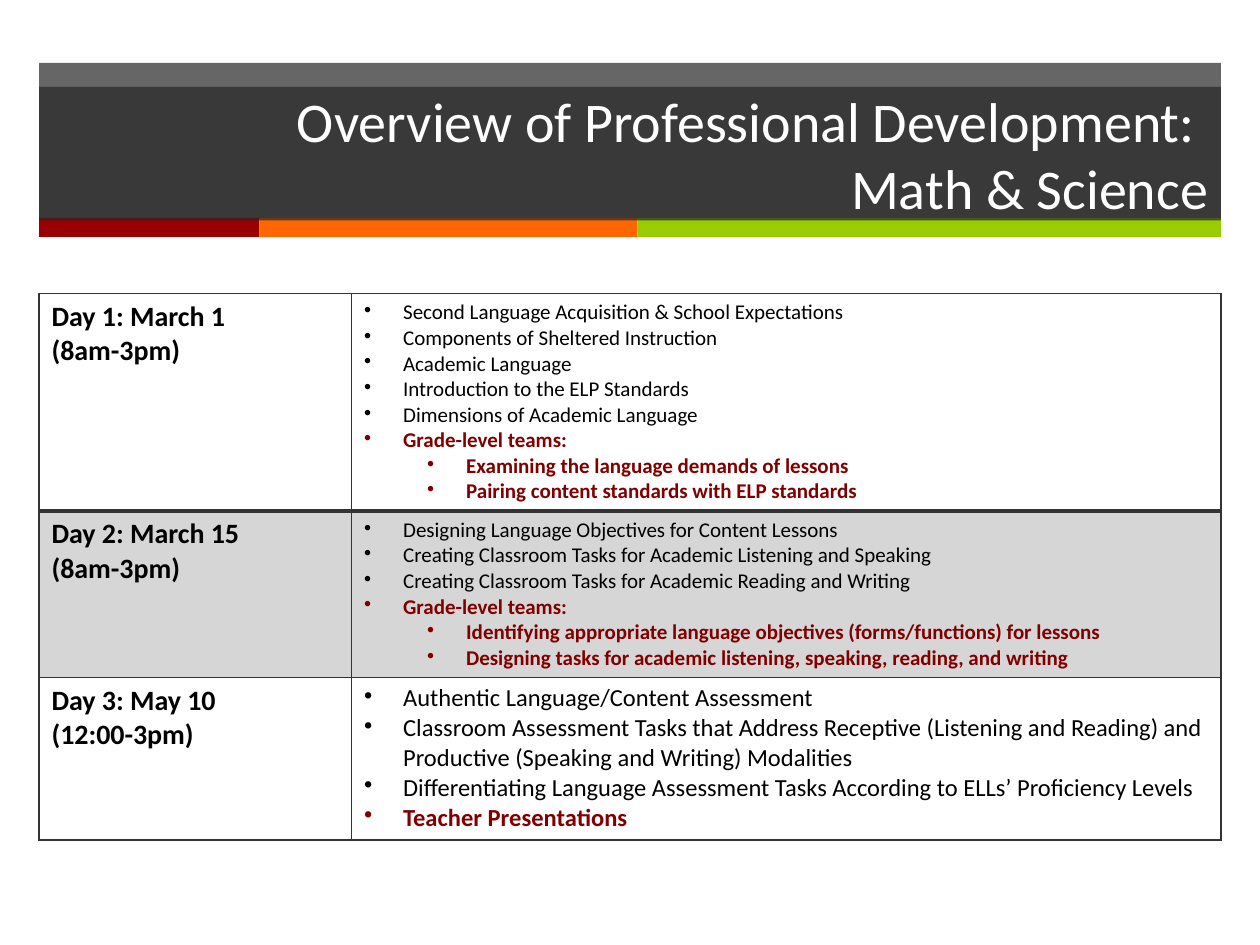
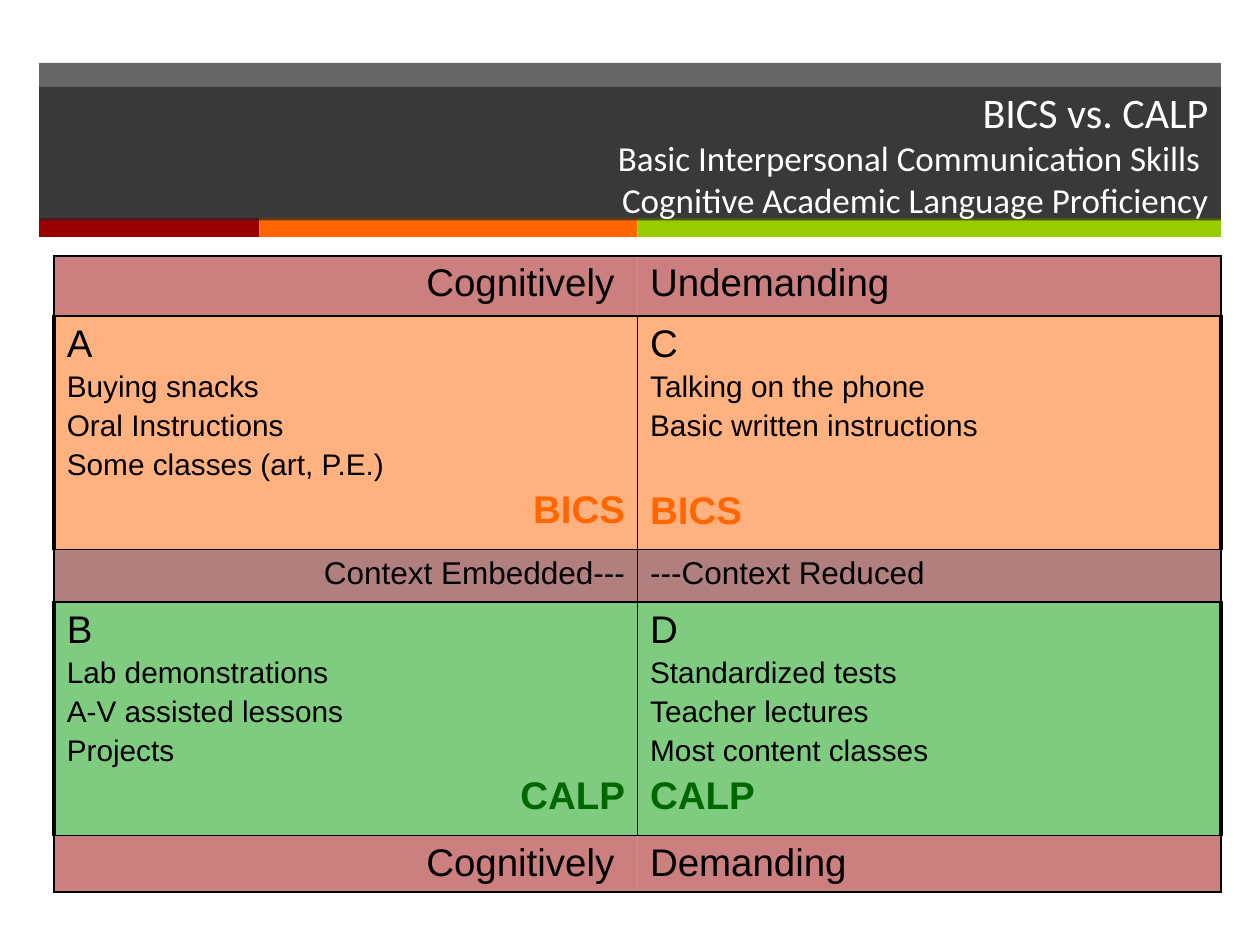
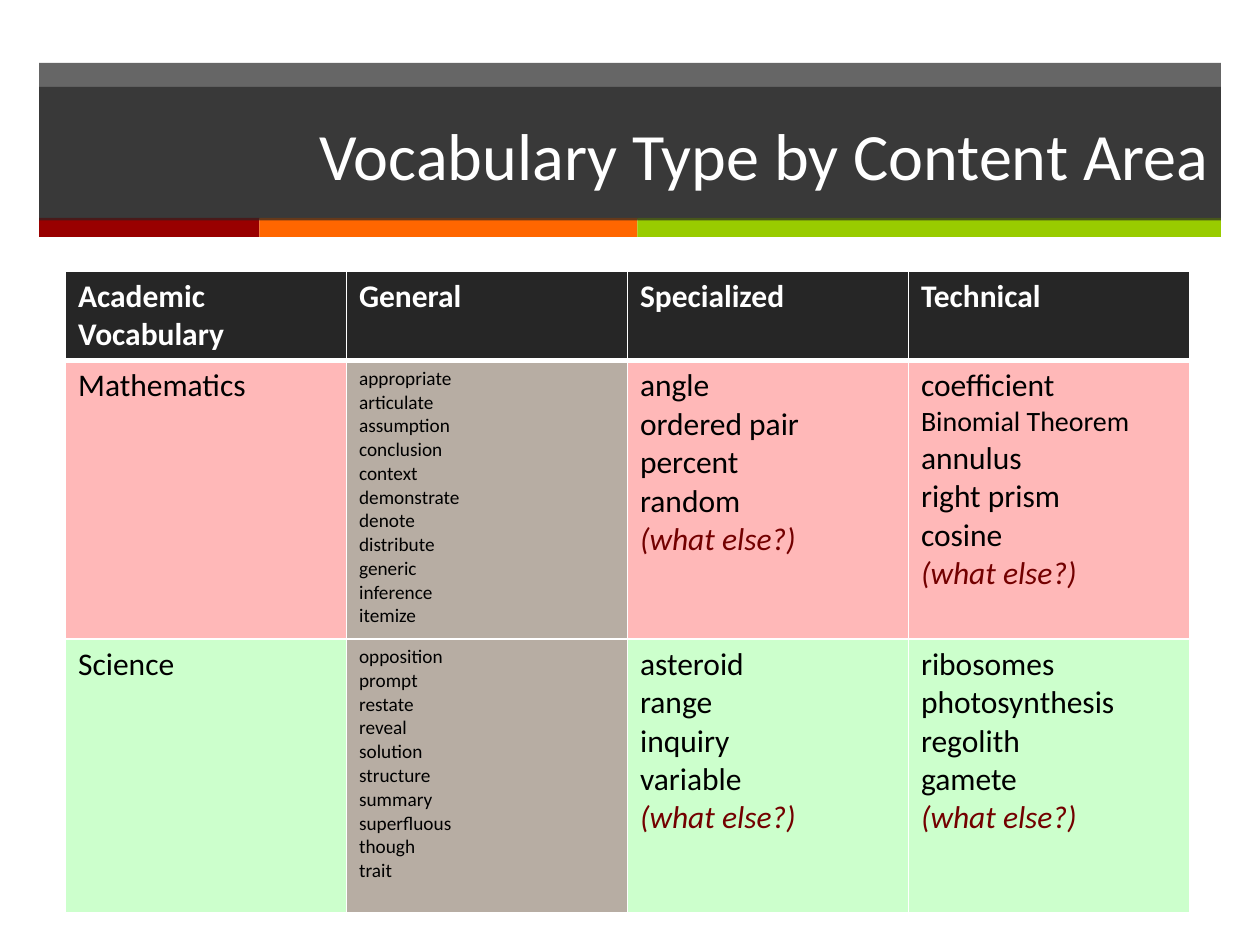
from dataclasses import dataclass, replace
from lxml import etree
from pptx import Presentation, util as u
from pptx.dml.color import RGBColor
from pptx.enum import shapes, text
from pptx.oxml.ns import qn

COLS, ROWS = 100, 75
UNIT = u.Inches(10) // COLS


@dataclass(frozen=True)
class Theme:
    sans: str = "Calibri"
    plain: str = "Arial"
    white: str = "FFFFFF"
    black: str = "000000"
    dark: str = "262626"
    line: str = "333333"
    red: str = "990000"
    orange: str = "FF6600"
    lime: str = "99CC00"
    maroon: str = "800000"
    wine: str = "660000"
    green: str = "009900"
    forest: str = "006600"
    pink: str = "FFB8B8"
    mint: str = "CCFFCC"
    taupe: str = "B7ADA3"
    ask: str = "730000"
    left: float = 3.1
    width: float = 93.8
    head: int = 22
    body: int = 17


@dataclass(frozen=True)
class Style:
    size: float
    color: str = "000000"
    font: str = "Calibri"
    bold: bool = False
    italic: bool = False
    right: bool = False
    level: int = -1  # bullet depth, -1 for none
    before: float = 0


T = Theme()
RIGHT = text.PP_ALIGN.RIGHT


def grid(*cells):
    return [round(c * UNIT) for c in cells]


def paint(item, node, color, alpha=100):
    """Fill a shape or cell; node is the XML element that holds the fill."""
    item.fill.solid()
    item.fill.fore_color.rgb = RGBColor.from_string(color)
    if alpha < 100:
        tone = node.find(".//" + qn("a:srgbClr"))
        etree.SubElement(tone, qn("a:alpha"), val=str(alpha * 1000))


def block(slide, x, y, w, h, color, alpha=100):
    box = slide.shapes.add_shape(shapes.MSO_SHAPE.RECTANGLE, *grid(x, y, w, h))
    box.shadow.inherit = False
    box.line.fill.background()
    paint(box, box._element.spPr, color, alpha)
    return box


def ink(run, style):
    font = run.font
    font.size, font.name = u.Pt(style.size), style.font
    font.bold, font.italic = style.bold, style.italic
    font.color.rgb = RGBColor.from_string(style.color)


def banner(slide, title, sizes):
    """Draw the shared bands and a title with one type size per line."""
    block(slide, T.left, 5, T.width, 12.4, T.dark, 70)
    x = T.left
    for w, color in ((17.5, T.red), (30, T.orange), (46.3, T.lime)):
        block(slide, x, 17.3, w, 1.5, color)
        x += w
    box = block(slide, T.left, 6.9, T.width, 10.6, T.dark, 70)
    frame = box.text_frame
    frame.word_wrap = True
    frame.vertical_anchor = text.MSO_ANCHOR.MIDDLE
    par = frame.paragraphs[0]
    par.text = title
    par.alignment = RIGHT
    for run, size in zip(par.runs, sizes):
        ink(run, Style(size, T.white))


def bullet(par, level):
    par.level = level
    props = par._p.get_or_add_pPr()
    props.set("marL", str(u.Inches(0.31 + 0.5 * level)))
    props.set("indent", str(u.Inches(-0.31)))
    etree.SubElement(props, qn("a:buChar"), char="•")


def write(cell, lines):
    frame = cell.text_frame
    frame.text = "\n".join(words for words, _ in lines)
    for par, (_, style) in zip(frame.paragraphs, lines):
        if style.right:
            par.alignment = RIGHT
        if style.before:
            par.space_before = u.Pt(style.before)
        if style.level >= 0:
            bullet(par, style.level)
        for run in par.runs:
            ink(run, style)


def border(cell, color, widths):
    """Set left, right, top and bottom lines; a width of 0 hides the line."""
    props = cell._tc.get_or_add_tcPr()
    for i, (side, width) in enumerate(zip("LRTB", widths)):
        line = etree.Element(qn("a:ln" + side), w=str(u.Pt(width)))
        if width:
            fill = etree.SubElement(line, qn("a:solidFill"))
            etree.SubElement(fill, qn("a:srgbClr"), val=color)
        else:
            etree.SubElement(line, qn("a:noFill"))
        props.insert(i, line)


def table(slide, x, y, cols, rows, cells, color, edges):
    """Cells are (lines, fill, alpha); edges(row, col) gives line widths."""
    place = grid(x, y, sum(cols), sum(rows))
    tab = slide.shapes.add_table(len(rows), len(cols), *place).table
    tab.first_row = tab.horz_banding = False
    for col, w in zip(tab.columns, grid(*cols)):
        col.width = w
    for row, h in zip(tab.rows, grid(*rows)):
        row.height = h
    for r, line in enumerate(cells):
        for c, (lines, fill, alpha) in enumerate(line):
            cell = tab.cell(r, c)
            write(cell, lines)
            paint(cell, cell._tc.get_or_add_tcPr(), fill, alpha)
            border(cell, color, edges(r, c))


def each(words, style):
    return [(word, style) for word in words]


def agenda(slide):
    banner(slide, "Overview of Professional Development: \vMath & Science", (32, 32))
    days = [
        (["Day 1: March 1 (8am-3pm)"], 12,
         ["Second Language Acquisition & School Expectations",
          "Components of Sheltered Instruction", "Academic Language",
          "Introduction to the ELP Standards", "Dimensions of Academic Language"],
         "Grade-level teams:",
         ["Examining the language demands of lessons",
          "Pairing content standards with ELP standards"]),
        (["Day 2: March 15 (8am-3pm)"], 12,
         ["Designing Language Objectives for Content Lessons",
          "Creating Classroom Tasks for Academic Listening and Speaking",
          "Creating Classroom Tasks for Academic Reading and Writing"],
         "Grade-level teams:",
         ["Identifying appropriate language objectives (forms/functions) for lessons",
          "Designing tasks for academic listening, speaking, reading, and writing"]),
        (["Day 3: May 10", "(12:00-3pm)"], 14,
         ["Authentic Language/Content Assessment",
          "Classroom Assessment Tasks that Address Receptive (Listening and Reading) "
          "and Productive (Speaking and Writing) Modalities",
          "Differentiating Language Assessment Tasks According to ELLs’ Proficiency Levels"],
         "Teacher Presentations", []),
    ]
    cells = []
    for i, (day, size, topics, team, tasks) in enumerate(days):
        topic = Style(size, level=0)
        strong = replace(topic, color=T.maroon, bold=True)
        lines = each(topics, topic) + [(team, strong)]
        lines += each(tasks, replace(strong, level=1))
        fill = (T.line, 20) if i == 1 else (T.white, 100)
        cells.append([(each(day, Style(16, bold=True)), *fill), (lines, *fill)])

    def edges(r, c):
        return 1, 1, 2 if r == 1 else 1, 2 if r == 0 else 1

    table(slide, T.left, 23.3, (24.8, 69), (17.2, 13.2, 12.9), cells, T.line, edges)


def matrix(slide):
    banner(slide, "BICS vs. CALP\vBasic Interpersonal Communication Skills \v"
                  "Cognitive Academic Language Proficiency", (24, 20, 20))
    head = Style(T.head, font=T.plain)
    item = Style(T.body, font=T.plain, before=3)
    axis = replace(head, size=18)

    def pair(words, style, fill):
        return [([(word, replace(style, right=c == 0))], fill, 50)
                for c, word in enumerate(words)]

    def quads(groups, tag, tint, fill):
        row = []
        for c, (key, *items) in enumerate(groups):
            gap = 4 + 22.5 * (3 - len(items))
            mark = replace(head, color=tint, bold=True, right=c == 0, before=gap)
            row.append(([(key, head), *each(items, item), (tag, mark)], fill, 50))
        return row

    cells = [
        pair(("Cognitively ", "Undemanding"), head, T.red),
        quads((("A", "Buying snacks", "Oral Instructions", "Some classes (art, P.E.)"),
               ("C", "Talking on the phone", "Basic written instructions")),
              "BICS", T.orange, T.orange),
        pair(("Context Embedded---", "---Context Reduced"), axis, T.wine),
        quads((("B", "Lab demonstrations", "A-V assisted lessons", "Projects"),
               ("D", "Standardized tests", "Teacher lectures", "Most content classes")),
              "CALP", T.forest, T.green),
        pair(("Cognitively ", "Demanding"), head, T.red),
    ]

    def edges(r, c):
        outer = 2.25 if r % 2 else 1
        inner = 0 if r in (0, 4) else 1
        return (inner, outer, 1, 1) if c else (outer, inner, 1, 1)

    table(slide, 4.3, 20.3, (46.3, 46.3), (4.8, 18.5, 4.2, 18.5, 4.5),
          cells, T.black, edges)


def vocab(slide):
    banner(slide, "Vocabulary Type by Content Area", (37.8,))
    word = Style(18)
    small, mid = replace(word, size=11), replace(word, size=16)
    top = replace(word, color=T.white, bold=True)
    more = ("(what else?)", replace(word, color=T.ask, italic=True))
    areas = [
        ("Mathematics", T.pink,
         "appropriate articulate assumption conclusion context demonstrate "
         "denote distribute generic inference itemize",
         ["angle", "ordered pair", "percent", "random"],
         ["coefficient", "Binomial Theorem", "annulus", "right prism", "cosine"]),
        ("Science", T.mint,
         "opposition prompt restate reveal solution structure summary "
         "superfluous though trait",
         ["asteroid", "range", "inquiry", "variable"],
         ["ribosomes", "photosynthesis", "regolith", "gamete"]),
    ]
    heads = ("Academic Vocabulary", "General", "Specialized", "Technical")
    cells = [[([(name, top)], T.dark, 100) for name in heads]]
    for area, fill, general, *lists in areas:
        row = [([(area, word)], fill, 100),
               (each(general.split(), small), T.taupe, 100)]
        for terms in lists:
            lines = [(t, mid if t == "Binomial Theorem" else word) for t in terms]
            row.append((lines + [more], fill, 100))
        cells.append(row)

    def edges(r, c):
        return 1, 1, 3 if r == 1 else 1, 3 if r == 0 else 1

    table(slide, 5.2, 21.5, [22.3] * 4, (7, 22.1, 21.7), cells, T.white, edges)


def main():
    deck = Presentation()
    deck.slide_width, deck.slide_height = grid(COLS, ROWS)
    for draw in (agenda, matrix, vocab):
        draw(deck.slides.add_slide(deck.slide_layouts[6]))
    deck.save("out.pptx")


if __name__ == "__main__":
    main()
